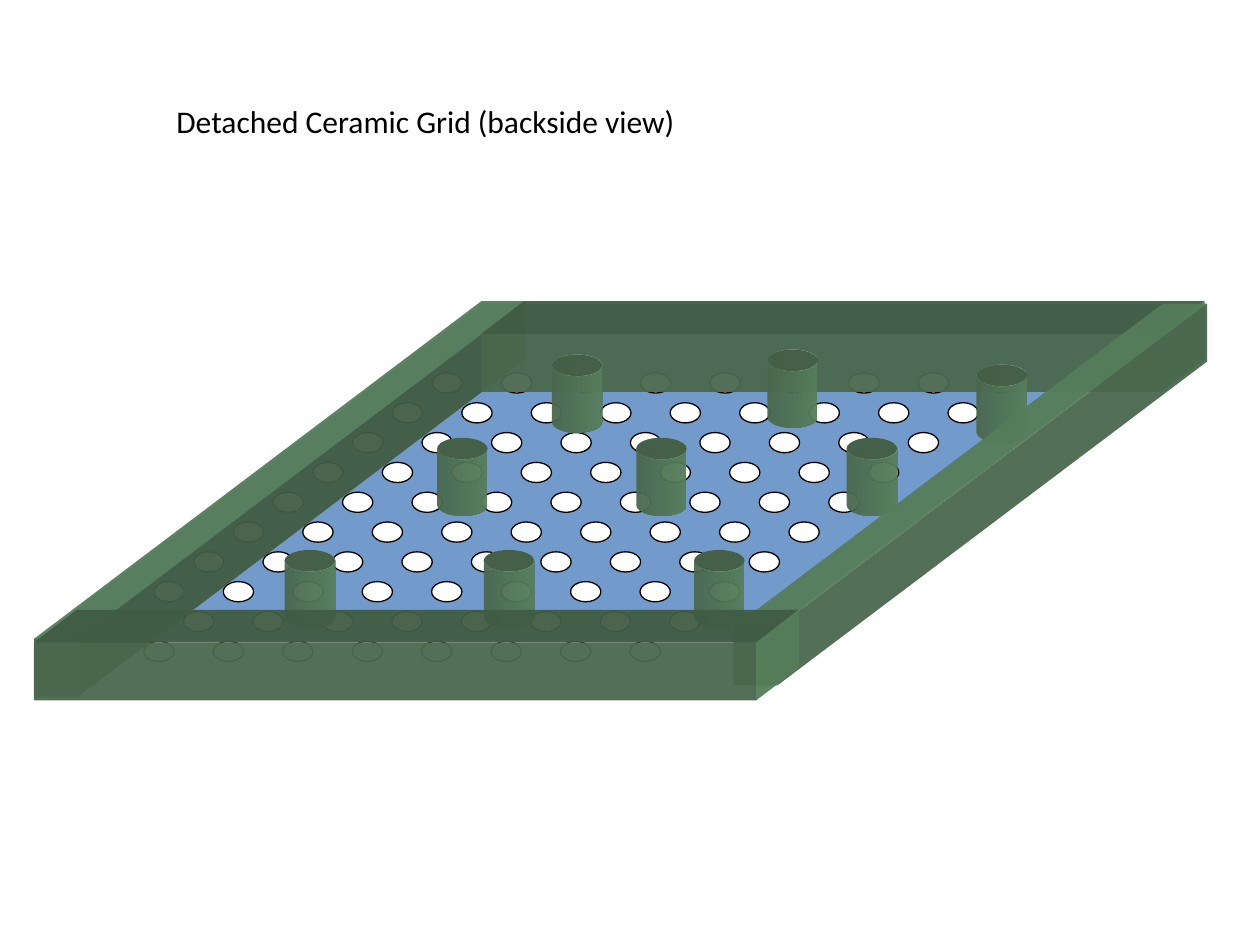
from dataclasses import dataclass

import pptx
import pptx.dml.color
import pptx.enum.shapes
import pptx.enum.text
import pptx.oxml
import pptx.oxml.ns
import pptx.util

Inches = pptx.util.Inches
MSO = pptx.enum.shapes.MSO_SHAPE


@dataclass(frozen=True)
class Theme:
    font: str = "Calibri"
    title_size: int = 18
    text: str = "000000"
    plate: str = "4F81BD"
    hole: str = "FFFFFF"
    dark: str = "415C44"
    mid: str = "4B684E"
    light: str = "557D5A"
    plate_alpha: int = 80
    frame_alpha: int = 95


@dataclass(frozen=True)
class Beam:
    """A front rectangle pushed back along (dx, dy), with one colour per face."""
    x: float
    y: float
    w: float
    h: float
    dx: float
    dy: float
    top: str
    side: str
    front: str


@dataclass(frozen=True)
class Post:
    cx: float
    cy: float


THEME = Theme()
POST_W, POST_H, LID_H = 0.4, 0.62, 0.17
HOLE_W, HOLE_H = 0.24, 0.16
ROWS, COLUMNS = 10, 9

LEFT_BEAM = Beam(0.27, 5.07, 0.35, 0.46, 3.55, -2.68,
                 THEME.light, THEME.dark, THEME.mid)
BACK_BEAM = Beam(3.82, 2.65, 5.4, 0.46, 0.34, -0.26,
                 THEME.dark, THEME.light, THEME.mid)
RIGHT_BEAM = Beam(5.82, 4.98, 0.35, 0.46, 3.41, -2.57,
                  THEME.light, THEME.mid, THEME.mid)
FRONT_BEAM = Beam(0.27, 5.1, 5.73, 0.46, 0.34, -0.26,
                  THEME.dark, THEME.light, THEME.mid)
POSTS = [
    Post(4.58, 2.9), Post(6.29, 2.86), Post(7.95, 2.98),
    Post(3.67, 3.56), Post(5.25, 3.56), Post(6.92, 3.56),
    Post(2.46, 4.45), Post(4.04, 4.45), Post(5.71, 4.45),
]


def rgb(color: str) -> pptx.dml.color.RGBColor:
    return pptx.dml.color.RGBColor.from_string(color)


def set_alpha(sp, percent: int) -> None:
    for clr in sp._element.spPr.iter(pptx.oxml.ns.qn("a:srgbClr")):
        clr.append(pptx.oxml.parse_xml(
            f'<a:alpha {pptx.oxml.ns.nsdecls("a")} val="{percent * 1000}"/>'))


def paint(sp, color: str, alpha: int = 100, line: str = "") -> None:
    sp.shadow.inherit = False
    sp.fill.solid()
    sp.fill.fore_color.rgb = rgb(color)
    if alpha < 100:
        set_alpha(sp, alpha)
    if line:
        sp.line.color.rgb = rgb(line)
        sp.line.width = pptx.util.Pt(0.75)
    else:
        sp.line.fill.background()


def add_preset(shapes, kind, x: float, y: float, w: float, h: float):
    return shapes.add_shape(kind, Inches(x), Inches(y), Inches(w), Inches(h))


def add_face(shapes, points: list[tuple[float, float]], color: str) -> None:
    corners = [(Inches(x), Inches(y)) for x, y in points]
    builder = shapes.build_freeform(*corners[0])
    builder.add_line_segments(corners[1:], close=True)
    paint(builder.convert_to_shape(), color, THEME.frame_alpha)


def add_beam(shapes, b: Beam) -> None:
    right, bottom = b.x + b.w, b.y + b.h
    back_right, back_top = right + b.dx, b.y + b.dy
    add_face(shapes, [(b.x, b.y), (right, b.y), (back_right, back_top),
                      (b.x + b.dx, back_top)], b.top)
    add_face(shapes, [(right, b.y), (back_right, back_top),
                      (back_right, bottom + b.dy), (right, bottom)], b.side)
    add_face(shapes, [(b.x, b.y), (right, b.y), (right, bottom),
                      (b.x, bottom)], b.front)


def add_post(shapes, post: Post) -> None:
    left, top = post.cx - POST_W / 2, post.cy - LID_H / 2
    body = add_preset(shapes, MSO.CAN, left, top, POST_W, POST_H)
    body.adjustments[0] = LID_H / POST_W
    paint(body, THEME.mid)
    body.fill.gradient()
    body.fill.gradient_angle = 0
    for stop, color in zip(body.fill.gradient_stops, (THEME.mid, THEME.light)):
        stop.color.rgb = rgb(color)
    set_alpha(body, THEME.frame_alpha)
    lid = add_preset(shapes, MSO.OVAL, left, top, POST_W, LID_H)
    paint(lid, THEME.dark, THEME.frame_alpha)


def add_holes(shapes) -> None:
    """Rows run from front to back, each shifted right along the slant."""
    group = shapes.add_group_shape()
    row_dx, row_dy = (3.43 - 0.59) / (ROWS - 1), (2.96 - 5.09) / (ROWS - 1)
    column_dx = (5 - 0.59) / (COLUMNS - 1)
    for row in range(ROWS):
        for column in range(COLUMNS):
            hole = add_preset(group.shapes, MSO.OVAL,
                              0.59 + row * row_dx + column * column_dx,
                              5.09 + row * row_dy, HOLE_W, HOLE_H)
            paint(hole, THEME.hole, line=THEME.text)


def set_text(sp, text: str, *, size: int, color: str, font: str) -> None:
    tf = sp.text_frame
    tf.word_wrap = False
    tf.auto_size = pptx.enum.text.MSO_AUTO_SIZE.SHAPE_TO_FIT_TEXT
    tf.vertical_anchor = pptx.enum.text.MSO_ANCHOR.TOP
    p = tf.paragraphs[0]
    p.alignment = pptx.enum.text.PP_ALIGN.LEFT
    r = p.add_run()
    r.text = text
    r.font.size = pptx.util.Pt(size)
    r.font.name = font
    r.font.color.rgb = rgb(color)


def main() -> None:
    prs = pptx.Presentation()
    prs.slide_width, prs.slide_height = Inches(10), Inches(7.5)
    s = prs.slides.add_slide(prs.slide_layouts[5])
    title = s.shapes.title
    title.left, title.top = Inches(1.3), Inches(0.76)
    title.width, title.height = Inches(4.26), Inches(0.4)
    set_text(title, "Detached Ceramic Grid (backside view)",
             size=THEME.title_size, color=THEME.text, font=THEME.font)

    plate = add_preset(s.shapes, MSO.PARALLELOGRAM, 0.27, 2.41, 9.29, 2.68)
    plate.adjustments[0] = 1.33
    paint(plate, THEME.plate, THEME.plate_alpha)
    add_holes(s.shapes)
    for beam in (LEFT_BEAM, BACK_BEAM):
        add_beam(s.shapes, beam)
    for post in POSTS:
        add_post(s.shapes, post)
    for beam in (RIGHT_BEAM, FRONT_BEAM):
        add_beam(s.shapes, beam)
    prs.save("out.pptx")


if __name__ == "__main__":
    main()
